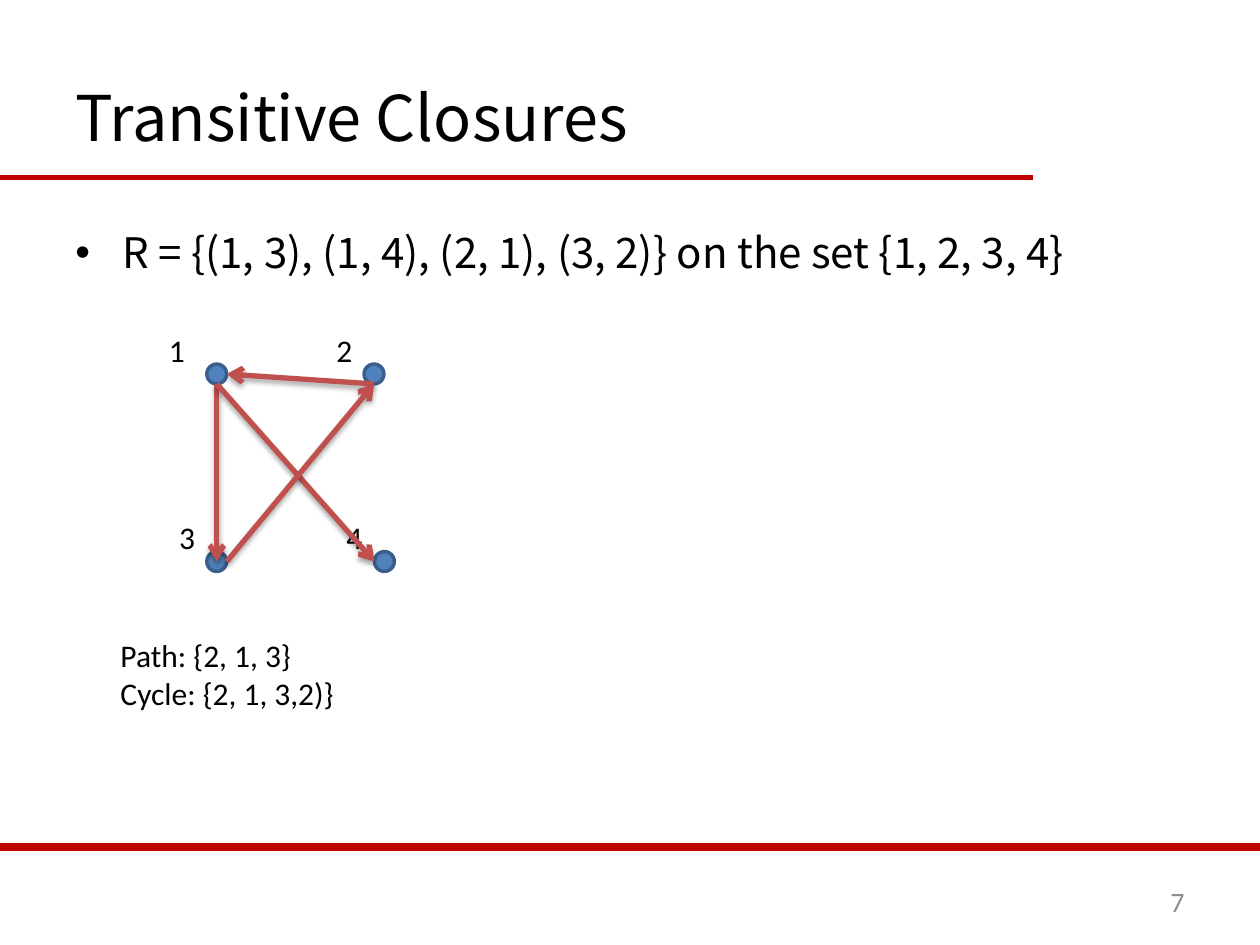
from lxml import etree
from pptx import Presentation
from pptx.dml.color import RGBColor
from pptx.enum.shapes import MSO_CONNECTOR, MSO_SHAPE
from pptx.enum.text import MSO_ANCHOR, PP_ALIGN
from pptx.oxml.ns import qn
from pptx.util import Cm, Pt

STRAIGHT = MSO_CONNECTOR.STRAIGHT
OVAL = MSO_SHAPE.OVAL
TOP, MIDDLE = MSO_ANCHOR.TOP, MSO_ANCHOR.MIDDLE
LEFT, CENTER, RIGHT = PP_ALIGN.LEFT, PP_ALIGN.CENTER, PP_ALIGN.RIGHT

HEADING_FONT, BODY_FONT = "Noto Sans CJK SC", "Calibri"
BLACK, GREY, RULE_RED = "000000", "8C8C8C", "C00000"
DOT_BLUE, DOT_EDGE, ARROW_RED = "4F81BD", "3A5F8C", "C0504D"

DOT_RADIUS = 0.2
# Node: centre x, centre y, left and top of its label (cm)
NODES = {
    "1": (4.37, 7.54, 2.97, 6.55),
    "2": (7.54, 7.54, 6.35, 6.55),
    "3": (4.37, 11.32, 3.18, 10.31),
    "4": (7.75, 11.32, 6.55, 10.31),
}
# Point on a dot, in radii from its centre
MID, BOTTOM, WEST, EAST = (0, 0), (0, 1), (-1, 0), (1, 0)
EDGES = [
    ("1", BOTTOM, "3", MID),
    ("1", BOTTOM, "4", WEST),
    ("2", BOTTOM, "1", EAST),
    ("3", EAST, "2", BOTTOM),
]


def rgb(color):
    return RGBColor.from_string(color)


def add_text(s, box, lines, size, font=BODY_FONT, color=BLACK, align=LEFT,
             anchor=TOP, wrap=True):
    tb = s.shapes.add_textbox(*(Cm(v) for v in box))
    tf = tb.text_frame
    tf.word_wrap = wrap
    tf.vertical_anchor = anchor
    for i, line in enumerate(lines):
        p = tf.paragraphs[0] if i == 0 else tf.add_paragraph()
        p.alignment = align
        r = p.add_run()
        r.text = line
        r.font.size = Pt(size)
        r.font.name = font
        r.font.color.rgb = rgb(color)
    return tb


def add_bullet(p, indent):
    pPr = p._p.get_or_add_pPr()
    pPr.set("marL", str(Cm(indent)))
    pPr.set("indent", str(-Cm(indent)))
    etree.SubElement(pPr, qn("a:buFont"), typeface="Arial")
    etree.SubElement(pPr, qn("a:buChar"), char="•")


def add_line(s, start, end, color, width):
    """Draw a straight line and return it with its empty effect list."""
    cxn = s.shapes.add_connector(STRAIGHT, *(Cm(v) for v in (*start, *end)))
    cxn.line.color.rgb = rgb(color)
    cxn.line.width = Pt(width)
    effects = etree.SubElement(cxn._element.spPr, qn("a:effectLst"))
    return cxn, effects


def add_arrow(s, start, end):
    cxn, effects = add_line(s, start, end, ARROW_RED, 3)
    etree.SubElement(cxn.line._get_or_add_ln(), qn("a:tailEnd"), type="arrow")
    shadow = etree.SubElement(
        effects, qn("a:outerShdw"), blurRad=str(Pt(3.1)), dist=str(Pt(1.8)),
        dir="5400000", rotWithShape="0")
    black = etree.SubElement(shadow, qn("a:srgbClr"), val=BLACK)
    etree.SubElement(black, qn("a:alpha"), val="35000")


def add_dot(s, x, y):
    sp = s.shapes.add_shape(OVAL, Cm(x - DOT_RADIUS), Cm(y - DOT_RADIUS),
                            Cm(2 * DOT_RADIUS), Cm(2 * DOT_RADIUS))
    sp.shadow.inherit = False
    sp.fill.solid()
    sp.fill.fore_color.rgb = rgb(DOT_BLUE)
    sp.line.color.rgb = rgb(DOT_EDGE)
    sp.line.width = Pt(2)


def dot_point(node, side):
    x, y = NODES[node][:2]
    return x + side[0] * DOT_RADIUS, y + side[1] * DOT_RADIUS


def add_graph(s):
    for x, y, _, _ in NODES.values():
        add_dot(s, x, y)
    for name, (_, _, left, top) in NODES.items():
        add_text(s, (left, top, 1.19, 1.02), [name], 18, align=CENTER)
    for tail, tail_side, head, head_side in EDGES:
        add_arrow(s, dot_point(tail, tail_side), dot_point(head, head_side))


def main():
    prs = Presentation()
    prs.slide_width, prs.slide_height = Cm(25.4), Cm(19.05)
    s = prs.slides.add_slide(prs.slide_layouts[6])

    add_line(s, (0, 3.58), (20.83, 3.58), RULE_RED, 3)
    add_line(s, (0, 17.07), (25.4, 17.07), RULE_RED, 4.5)
    add_text(s, (1.27, 0.76, 22.86, 3.18), ["Transitive Closures"], 36,
             font=HEADING_FONT, anchor=MIDDLE)
    body = add_text(s, (1.27, 4.45, 22.86, 12.57),
                    ["R = {(1, 3), (1, 4), (2, 1), (3, 2)} on the set {1, 2, 3, 4}"],
                    24, font=HEADING_FONT)
    add_bullet(body.text_frame.paragraphs[0], 0.95)
    add_text(s, (18.2, 17.66, 5.93, 1.01), ["7"], 16, color=GREY,
             align=RIGHT, anchor=MIDDLE)
    add_graph(s)
    add_text(s, (2.18, 12.7, 4.88, 1.8),
             ["Path: {2, 1, 3}", "Cycle: {2, 1, 3,2)}"], 18, wrap=False)
    prs.save("out.pptx")


if __name__ == "__main__":
    main()
